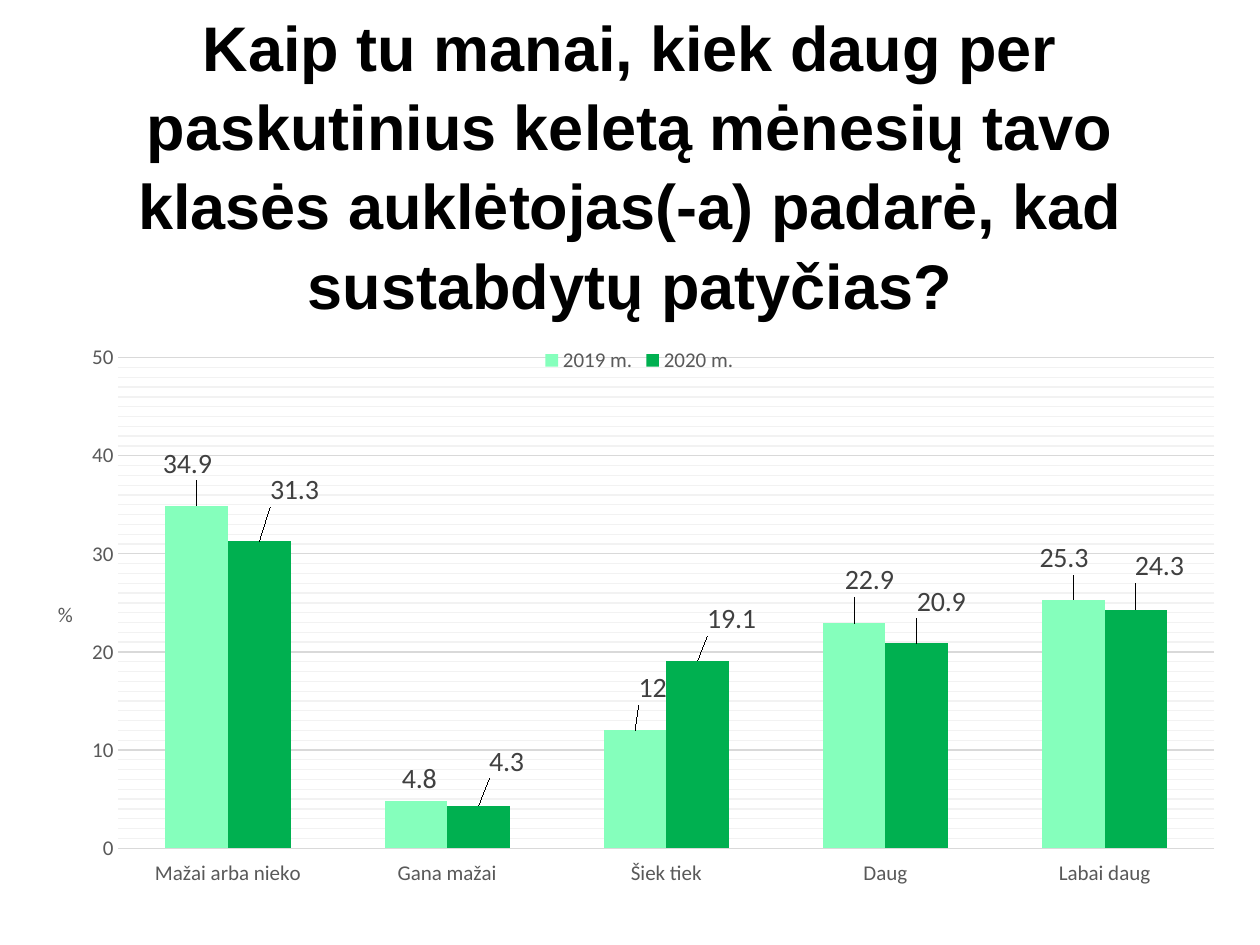
import copy
from dataclasses import dataclass

from lxml import etree
from pptx import Presentation
from pptx import util as u
from pptx.chart import data as chart_data
from pptx.dml import color
from pptx.enum import chart as ch, text
from pptx.oxml import ns

QUESTION = ("Kaip tu manai, kiek daug per paskutinius keletą mėnesių tavo klasės "
            "auklėtojas(-a) padarė, kad sustabdytų patyčias?")
ANSWERS = ["Mažai arba nieko", "Gana mažai", "Šiek tiek", "Daug", "Labai daug"]
YEARS = {
    "2019 m.": {
        "shares": [34.9, 4.8, 12, 22.9, 25.3], "fill": "85FFBC", "format": "General",
        "shifts": [(-0.8, -3.5), (0.3, 0), (1.5, -3.5), (1.3, -3.8), (-0.8, -3.5)]},
    "2020 m.": {
        "shares": [31.3, 4.3, 19.1, 20.9, 24.3], "fill": "00B050", "format": "0.0",
        "shifts": [(3, -5.1), (2.4, -3.9), (2.9, -3.4), (2.1, -3.4), (2, -3.7)]},
}


def rgb(value):
    return color.RGBColor.from_string(value)


def add_layout(parent, position, **settings):
    layout = etree.Element(ns.qn("c:layout"))
    manual = etree.SubElement(layout, ns.qn("c:manualLayout"))
    for name, value in settings.items():
        etree.SubElement(manual, ns.qn("c:" + name)).set("val", str(value))
    parent.insert(position, layout)


@dataclass
class SurveySlide:
    """Draws the survey question and its answers on one slide."""

    slide: object
    title_font: str = "Arial"
    chart_font: str = "Calibri"
    ink: str = "000000"
    axis_ink: str = "595959"
    label_ink: str = "404040"

    def style(self, font, size, ink, name=None, bold=False):
        font.name = name or self.chart_font
        font.size = u.Pt(size)
        font.bold = bold
        font.color.rgb = rgb(ink)

    def title(self, wording, left, top, width, height):
        box = self.slide.shapes.add_textbox(u.Cm(left), u.Cm(top), u.Cm(width), u.Cm(height))
        frame = box.text_frame
        frame.word_wrap = True
        frame.vertical_anchor = text.MSO_ANCHOR.MIDDLE
        question = frame.paragraphs[0]
        question.alignment = text.PP_ALIGN.CENTER
        question.line_spacing = 1.05
        run = question.add_run()
        run.text = wording
        self.style(run.font, 36, self.ink, self.title_font, True)

    def columns(self, answers, years, left, top, width, height):
        results = chart_data.CategoryChartData()
        results.categories = answers
        for year, details in years.items():
            results.add_series(year, details["shares"], details["format"])
        chart = self.slide.shapes.add_chart(
            ch.XL_CHART_TYPE.COLUMN_CLUSTERED, u.Cm(left), u.Cm(top),
            u.Cm(width), u.Cm(height), results).chart
        self.style(chart.font, 10, self.ink)
        chart.has_title = False
        chart.has_legend = True
        chart.legend.position = ch.XL_LEGEND_POSITION.TOP
        chart.legend.include_in_layout = False
        self.style(chart.legend.font, 12, self.axis_ink)

        plot = chart.plots[0]
        plot.gap_width = 150
        plot.overlap = 0
        plot.vary_by_categories = False
        area = plot._element.getparent()
        for old in area.findall(ns.qn("c:layout")):
            area.remove(old)
        add_layout(area, 0, layoutTarget="inner", xMode="edge", yMode="edge",
                   x=5.5 / 100, y=4.2 / 100, w=93.6 / 100, h=86.3 / 100)
        for series, details in zip(plot.series, years.values()):
            series.format.fill.solid()
            series.format.fill.fore_color.rgb = rgb(details["fill"])
            self.labels(series, details)
        self.axes(chart)

    def labels(self, series, details):
        labels = series.data_labels
        labels.show_value = True
        labels.position = ch.XL_LABEL_POSITION.OUTSIDE_END
        labels.number_format = details["format"]
        labels.number_format_is_linked = False
        self.style(labels.font, 16, self.label_ink)
        for index in range(len(details["shares"])):
            label = series.points[index].data_label
            label.position = ch.XL_LABEL_POSITION.OUTSIDE_END
            self.style(label.font, 16, self.label_ink)
        elements = series._element.findall(ns.qn("c:dLbls") + "/" + ns.qn("c:dLbl"))
        for element, (across, down) in zip(elements, details["shifts"]):
            add_layout(element, 1, x=across / 100, y=down / 100)

    def axes(self, chart):
        for axis in (chart.category_axis, chart.value_axis):
            axis.major_tick_mark = axis.minor_tick_mark = ch.XL_TICK_MARK.NONE
            axis.format.line.fill.background()
            self.style(axis.tick_labels.font, 12, self.axis_ink)
        chart.category_axis.tick_label_position = ch.XL_TICK_LABEL_POSITION.LOW

        percent = chart.value_axis
        percent.minimum_scale, percent.maximum_scale = 0, 50
        percent.major_unit, percent.minor_unit = 10, 1
        percent.has_major_gridlines = percent.has_minor_gridlines = True
        grid_line = percent.major_gridlines.format.line
        grid_line.width = u.Pt(0.75)
        grid_line.color.rgb = rgb("F2F2F2")
        major, minor = (percent._element.find(ns.qn(f"c:{size}Gridlines"))
                        for size in ("major", "minor"))
        minor.append(copy.deepcopy(major.find(ns.qn("c:spPr"))))
        grid_line.color.rgb = rgb("D9D9D9")

        frame = percent.axis_title.text_frame
        unit = frame.paragraphs[0].add_run()
        unit.text = "%"
        self.style(unit.font, 12, self.axis_ink)
        body = frame._txBody.find(ns.qn("a:bodyPr"))
        body.set("rot", "0")
        body.set("vert", "horz")


def main():
    deck = Presentation()
    deck.slide_width, deck.slide_height = u.Cm(25.4), u.Cm(19.05)
    survey = SurveySlide(deck.slides.add_slide(deck.slide_layouts[6]))
    survey.title(QUESTION, 1.9, 1.7, 21.6, 3.18)
    survey.columns(ANSWERS, YEARS, 1.09, 6.73, 23.6, 11.46)
    deck.save("out.pptx")


if __name__ == "__main__":
    main()
